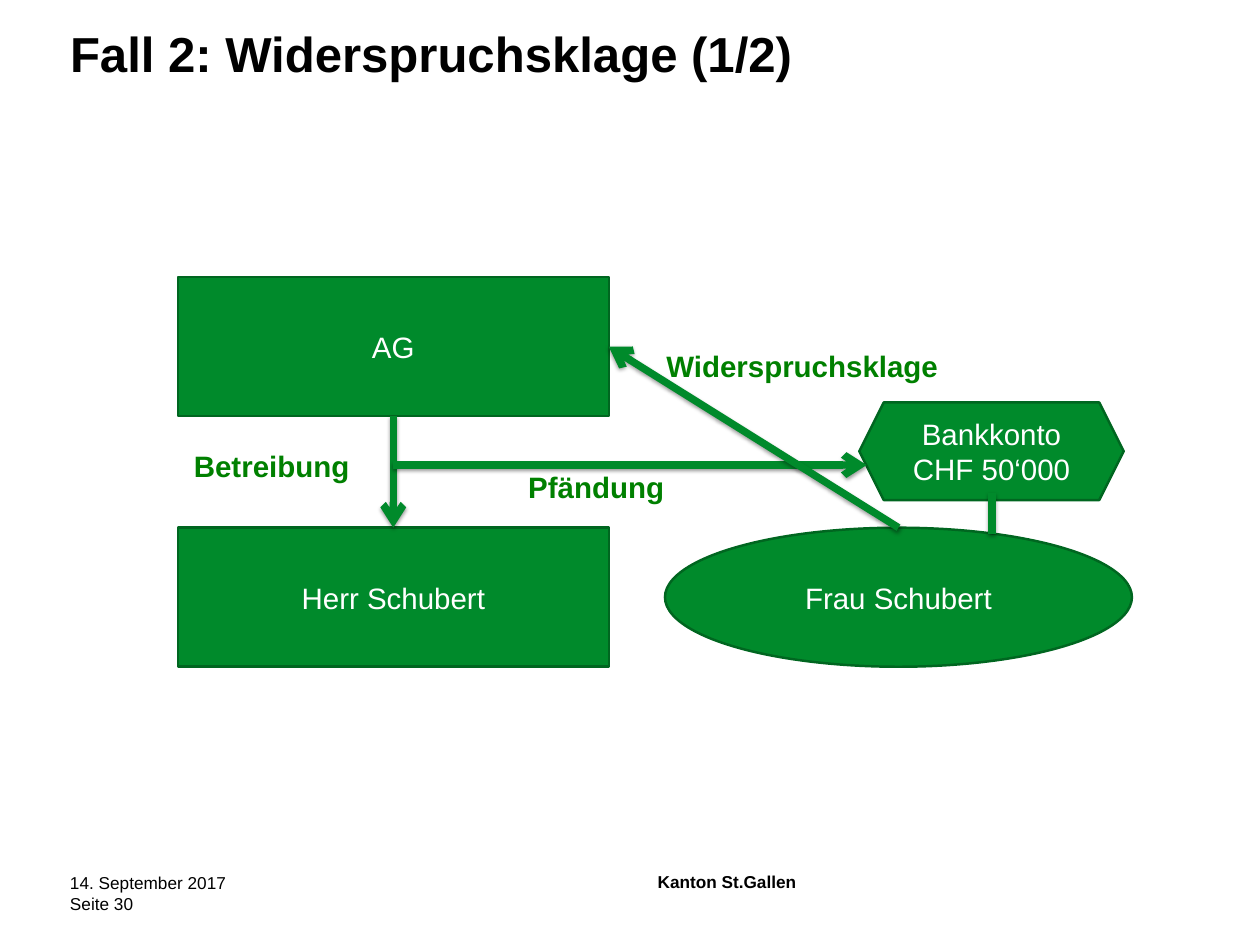
from dataclasses import dataclass

from lxml.etree import SubElement
from pptx import Presentation
from pptx.dml.color import RGBColor
from pptx.enum.shapes import MSO_CONNECTOR, MSO_SHAPE as Shape
from pptx.enum.text import MSO_ANCHOR as Anchor, PP_ALIGN as Align
from pptx.oxml.ns import qn
from pptx.util import Emu, Pt

PX = 9525
FONT = "Arial"
BLACK, WHITE = "000000", "FFFFFF"
GREEN, DARK_GREEN, LABEL_GREEN = "008A2B", "006620", "008000"
TOP, BOTTOM, RIGHT = 0, 2, 3


@dataclass
class Area:
    left: int
    top: int
    width: int
    height: int

    def emu(self) -> list[Emu]:
        return [px(n) for n in (self.left, self.top, self.width, self.height)]


@dataclass
class Node:
    text: str
    kind: Shape
    area: Area


@dataclass
class Label:
    text: str
    area: Area
    size: int = 24
    color: str = LABEL_GREEN
    bold: bool = True
    inset: bool = True
    spacing: int | None = None


@dataclass
class Link:
    start: tuple[int, int]
    end: tuple[int, int]
    arrow: bool = True
    begin_at: tuple[str, int] | None = None
    end_at: tuple[str, int] | None = None


NODES = [
    Node("Herr Schubert", Shape.RECTANGLE, Area(193, 573, 468, 151)),
    Node("Frau Schubert", Shape.OVAL, Area(722, 573, 507, 151)),
    Node("AG", Shape.RECTANGLE, Area(193, 301, 468, 151)),
    Node("Bankkonto\nCHF 50‘000", Shape.HEXAGON, Area(933, 437, 287, 106)),
]
LINKS = [
    Link((427, 452), (427, 573), begin_at=("AG", BOTTOM), end_at=("Herr Schubert", TOP)),
    Link((427, 505), (941, 505)),
    Link((975, 573), (661, 376), begin_at=("Frau Schubert", TOP), end_at=("AG", RIGHT)),
    Link((1077, 535), (1077, 580), arrow=False),
]
LABELS = [
    Label("Betreibung", Area(201, 482, 279, 48)),
    Label("Pfändung", Area(564, 505, 234, 48)),
    Label("Widerspruchsklage", Area(714, 373, 325, 48)),
    Label("Kanton St.Gallen", Area(714, 946, 545, 23), 14, BLACK, inset=False),
    Label("14. September 2017", Area(76, 947, 306, 19), 14, BLACK, False, False, 17),
    Label("Seite 30", Area(76, 970, 306, 19), 14, BLACK, False, False),
]


def px(length: int) -> Emu:
    return Emu(length * PX)


def rgb(color: str) -> RGBColor:
    return RGBColor.from_string(color)


def format_text(frame, size: int, color: str, bold: bool, align: Align) -> None:
    frame.word_wrap = True
    for para in frame.paragraphs:
        para.alignment = align
        for span in para.runs:
            span.font.name = FONT
            span.font.size = Pt(size)
            span.font.bold = bold
            span.font.color.rgb = rgb(color)


def clear_insets(frame) -> None:
    frame.margin_left = frame.margin_top = frame.margin_right = frame.margin_bottom = 0


def add_title(page, text: str, area: Area) -> None:
    title = page.shapes.title
    title.left, title.top, title.width, title.height = area.emu()
    frame = title.text_frame
    frame.text = text
    clear_insets(frame)
    frame.vertical_anchor = Anchor.TOP
    format_text(frame, 40, BLACK, True, Align.LEFT)


def add_node(page, node: Node):
    box = page.shapes.add_shape(node.kind, *node.area.emu())
    box.shadow.inherit = False
    box.fill.solid()
    box.fill.fore_color.rgb = rgb(GREEN)
    box.line.color.rgb = rgb(DARK_GREEN)
    box.line.width = Pt(2)
    box.text_frame.text = node.text
    box.text_frame.vertical_anchor = Anchor.MIDDLE
    format_text(box.text_frame, 24, WHITE, False, Align.CENTER)
    return box


def add_label(page, label: Label) -> None:
    frame = page.shapes.add_textbox(*label.area.emu()).text_frame
    frame.text = label.text
    if not label.inset:
        clear_insets(frame)
    if label.spacing:
        frame.paragraphs[0].line_spacing = Pt(label.spacing)
    format_text(frame, label.size, label.color, label.bold, Align.LEFT)


def add_link(page, link: Link, boxes: dict) -> None:
    ends = [px(n) for n in link.start + link.end]
    line = page.shapes.add_connector(MSO_CONNECTOR.STRAIGHT, *ends)
    if link.begin_at:
        name, side = link.begin_at
        line.begin_connect(boxes[name], side)
    if link.end_at:
        name, side = link.end_at
        line.end_connect(boxes[name], side)
    line.line.color.rgb = rgb(GREEN)
    line.line.width = Pt(6)
    properties = line.element.spPr
    if link.arrow:
        SubElement(properties.find(qn("a:ln")), qn("a:tailEnd"), type="arrow")
    effects = SubElement(properties, qn("a:effectLst"))
    shadow = SubElement(effects, qn("a:outerShdw"), blurRad="40000", dist="20000",
                        dir="5400000", rotWithShape="0")
    tint = SubElement(shadow, qn("a:srgbClr"), val=BLACK)
    SubElement(tint, qn("a:alpha"), val="38000")


def main() -> None:
    deck = Presentation()
    deck.slide_width, deck.slide_height = px(1368), px(1024)
    page = deck.slides.add_slide(deck.slide_layouts[5])
    add_title(page, "Fall 2: Widerspruchsklage (1/2)", Area(76, 25, 1255, 144))
    boxes = {node.text: add_node(page, node) for node in NODES}
    for link in LINKS:
        add_link(page, link, boxes)
    for label in LABELS:
        add_label(page, label)
    deck.save("out.pptx")


if __name__ == "__main__":
    main()
